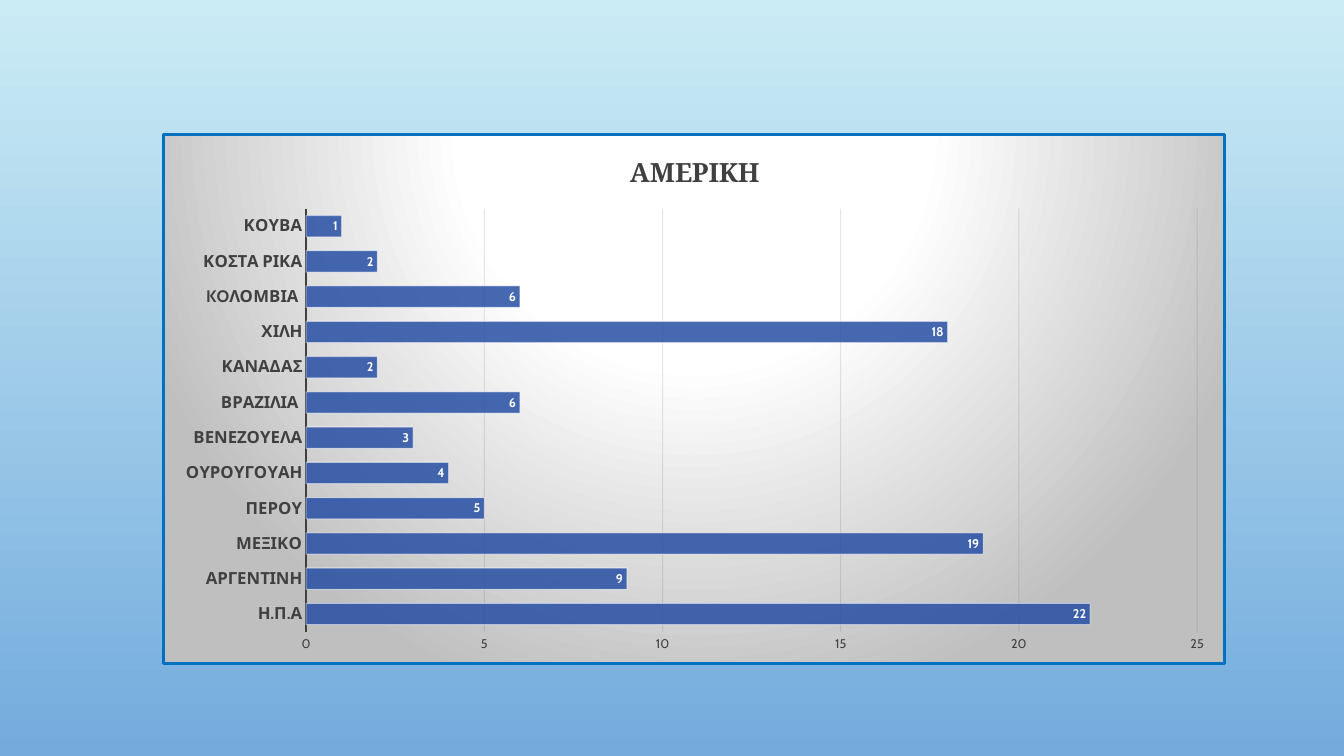
import pptx
import pptx.util
import pptx.dml.color
import pptx.chart.data
import pptx.enum.chart
import pptx.oxml
import pptx.oxml.ns

# Content
TITLE = "ΑΜΕΡΙΚΗ"
COUNTRIES = [
    ("Η.Π.Α", 22), ("ΑΡΓΕΝΤΙΝΗ", 9), ("ΜΕΞΙΚΟ", 19), ("ΠΕΡΟΥ", 5),
    ("ΟΥΡΟΥΓΟΥΑΗ", 4), ("ΒΕΝΕΖΟΥΕΛΑ", 3), ("ΒΡΑΖΙΛΙΑ ", 6), ("ΚΑΝΑΔΑΣ", 2),
    ("ΧΙΛΗ", 18), ("KOΛΟΜΒΙΑ ", 6), ("ΚΟΣΤΑ ΡΙΚΑ", 2), ("ΚΟΥΒΑ", 1),
]
BACKGROUND = ["CBECF5", "73ABDD"]
CHART_STOPS = [(0, "FFFFFF"), (39, "FFFFFF"), (100, "BFBFBF")]
PLOT = {"x": 0.134, "y": 0.14, "w": 0.84, "h": 0.8}
BODY, HEAD, GREY = "Cabin", "Cambria", "404040"

Pt = pptx.util.Pt
xl = pptx.enum.chart
NS = pptx.oxml.ns.nsdecls("c", "a")


def rgb(color):
    return pptx.dml.color.RGBColor.from_string(color)


def set_font(font, size, color, bold=False, name=BODY):
    font.size, font.bold, font.name = Pt(size), bold, name
    font.color.rgb = rgb(color)


def set_line(line, color, width):
    line.color.rgb = rgb(color)
    line.width = Pt(width)


def set_alpha(element, where, percent):
    for clr in element.xpath(where + "//a:srgbClr"):
        alpha = clr.makeelement(pptx.oxml.ns.qn("a:alpha"), {"val": str(percent * 1000)})
        clr.append(alpha)


# Slide and background
prs = pptx.Presentation()
prs.slide_width, prs.slide_height = Pt(960), Pt(540)
s = prs.slides.add_slide(prs.slide_layouts[6])
fill = s.background.fill
fill.gradient()
fill.gradient_angle = 270
for stop, color, position in zip(fill.gradient_stops, BACKGROUND, (0, 1)):
    stop.color.rgb = rgb(color)
    stop.position = position

# Chart and title
data = pptx.chart.data.CategoryChartData()
data.categories = [name for name, _ in COUNTRIES]
data.add_series("Series 1", [value for _, value in COUNTRIES])
chart = s.shapes.add_chart(xl.XL_CHART_TYPE.BAR_CLUSTERED, Pt(116), Pt(95),
                           Pt(760), Pt(380), data).chart
chart.has_legend = False
set_font(chart.font, 10, "000000")
chart.has_title = True
chart.chart_title.include_in_layout = False
r = chart.chart_title.text_frame.paragraphs[0].add_run()
r.text = TITLE
set_font(r.font, 19, GREY, True, HEAD)

# Axes
cat, val = chart.category_axis, chart.value_axis
for axis, size, bold in ((cat, 12, True), (val, 9, False)):
    axis.major_tick_mark = axis.minor_tick_mark = xl.XL_TICK_MARK.NONE
    set_font(axis.tick_labels.font, size, GREY, bold)
set_line(cat.format.line, GREY, 1.5)
val.format.line.fill.background()
val.minimum_scale, val.maximum_scale, val.major_unit = 0, 25, 5
val.has_major_gridlines = True
set_line(val.major_gridlines.format.line, "0D0D0D", 0.75)
set_alpha(val._element, "c:majorGridlines", 10)

# Bars and value labels
plot = chart.plots[0]
plot.gap_width = 65
plot.vary_by_categories = False
bars = plot.series[0]
bars.format.fill.solid()
bars.format.fill.fore_color.rgb = rgb("274FA4")
set_line(bars.format.line, "FFFFFF", 0.75)
set_alpha(bars._element, "c:spPr/a:solidFill", 85)
set_alpha(bars._element, "c:spPr/a:ln", 50)
labels = bars.data_labels
labels.show_value = True
labels.position = xl.XL_LABEL_POSITION.INSIDE_END
set_font(labels.font, 9, "FFFFFF", True)

# Plot area placement
modes = "".join(f'<c:{k}Mode val="edge"/>' for k in "xy")
sizes = "".join(f'<c:{k} val="{v}"/>' for k, v in PLOT.items())
layout = pptx.oxml.parse_xml(
    f'<c:layout {NS}><c:manualLayout><c:layoutTarget val="inner"/>'
    f'{modes}{sizes}</c:manualLayout></c:layout>')
area = chart._chartSpace.xpath("c:chart/c:plotArea")[0]
for old in area.xpath("c:layout"):
    area.remove(old)
area.insert(0, layout)

# Radial chart fill and border
stops = "".join(f'<a:gs pos="{pos * 1000}"><a:srgbClr val="{color}"/></a:gs>'
                for pos, color in CHART_STOPS)
frame = pptx.oxml.parse_xml(
    f'<c:spPr {NS}><a:gradFill><a:gsLst>{stops}</a:gsLst><a:path path="circle">'
    '<a:fillToRect l="50000" t="-80000" r="50000" b="180000"/></a:path></a:gradFill>'
    f'<a:ln w="{Pt(2.25)}"><a:solidFill><a:srgbClr val="0070C0"/></a:solidFill></a:ln>'
    '</c:spPr>')
chart._chartSpace.xpath("c:chart")[0].addnext(frame)

prs.save("out.pptx")
